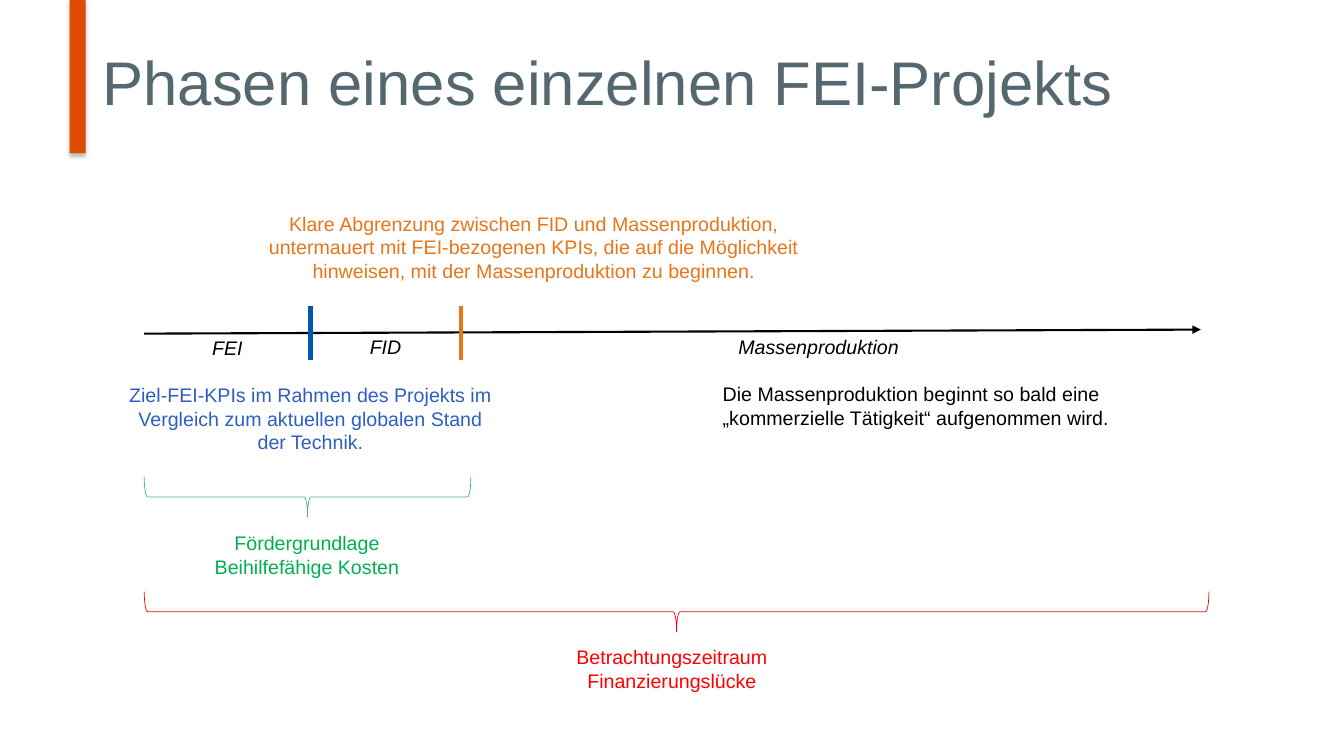
from lxml import etree
from pptx import Presentation
from pptx import util as u
from pptx.dml.color import RGBColor
from pptx.enum import shapes, text
from pptx.oxml.ns import qn

BLACK, ORANGE, BLUE, GREEN, RED = "000000", "E87618", "2D5EC1", "00B050", "FF0000"
LEFT, CENTER = text.PP_ALIGN.LEFT, text.PP_ALIGN.CENTER


def rgb(value):
    return RGBColor.from_string(value)


class PhaseSlide:
    font = "Arial"
    size = 14

    def __init__(self, prs):
        self.s = prs.slides.add_slide(prs.slide_layouts[6])

    def bar(self, x, y, w, h, color):
        """Add a filled bar with a soft shadow below it."""
        sp = self.s.shapes.add_shape(shapes.MSO_SHAPE.RECTANGLE, *map(u.Inches, (x, y, w, h)))
        sp.fill.solid()
        sp.fill.fore_color.rgb = rgb(color)
        sp.line.fill.background()
        sp.shadow.inherit = False
        effects = sp.element.spPr.find(qn("a:effectLst"))
        shadow = etree.SubElement(effects, qn("a:outerShdw"), blurRad=str(u.Pt(3)),
                                  dist=str(u.Pt(2)), dir="5400000", rotWithShape="0")
        tint = etree.SubElement(shadow, qn("a:srgbClr"), val=BLACK)
        etree.SubElement(tint, qn("a:alpha"), val="27000")

    def line(self, x1, y1, x2, y2, color, width, arrow=False):
        c = self.s.shapes.add_connector(shapes.MSO_CONNECTOR.STRAIGHT,
                                        *map(u.Inches, (x1, y1, x2, y2)))
        c.line.color.rgb = rgb(color)
        c.line.width = u.Pt(width)
        if arrow:
            ln = c.element.spPr.find(qn("a:ln"))
            etree.SubElement(ln, qn("a:tailEnd"), type="triangle")
        etree.SubElement(c.element.spPr, qn("a:effectLst"))

    def brace(self, x, y, length, color, depth=0.4):
        """Add a brace that opens upwards; x and y are its visible top left."""
        left, top = x + (length - depth) / 2, y + (depth - length) / 2
        sp = self.s.shapes.add_shape(shapes.MSO_SHAPE.RIGHT_BRACE,
                                     *map(u.Inches, (left, top, depth, length)))
        sp.rotation = 90
        sp.fill.background()
        sp.line.color.rgb = rgb(color)
        sp.line.width = u.Pt(0.5)
        sp.shadow.inherit = False

    def text(self, x, y, w, h, lines, color, size=None, italic=False, align=CENTER,
             anchor=text.MSO_ANCHOR.TOP, spacing=None, wrap=True):
        """Add a text box; each line is a paragraph, and \\n breaks within it."""
        tf = self.s.shapes.add_textbox(*map(u.Inches, (x, y, w, h))).text_frame
        tf.word_wrap = wrap
        tf.vertical_anchor = anchor
        for i, content in enumerate(lines):
            p = tf.add_paragraph() if i else tf.paragraphs[0]
            p.alignment = align
            if spacing:
                p.line_spacing = spacing
            for j, part in enumerate(content.split("\n")):
                if j:
                    p.add_line_break()
                r = p.add_run()
                r.text = part
                r.font.name = self.font
                r.font.size = u.Pt(size or self.size)
                r.font.italic = italic
                r.font.color.rgb = rgb(color)


def main():
    prs = Presentation()
    prs.slide_width, prs.slide_height = u.Inches(13.33), u.Inches(7.5)
    s = PhaseSlide(prs)

    s.bar(0.69, 0, 0.16, 1.52, "E04900")
    s.text(0.92, 0.4, 11.5, 0.89, ["Phasen eines einzelnen FEI-Projekts"], "55676F",
           size=44, align=LEFT, anchor=text.MSO_ANCHOR.MIDDLE, spacing=0.9)

    start = 1.43
    s.line(start, 3.31, 11.91, 3.27, BLACK, 1.5, arrow=True)
    for x, color in ((3.08, "0356B1"), (4.57, ORANGE)):
        s.line(x, 3.04, x, 3.57, color, 3)
    for phase, x, y, w in (("FEI", 1.87, 3.28, 0.77), ("FID", 3.31, 3.27, 1.03),
                           ("Massenproduktion", 5.51, 3.27, 5.22)):
        s.text(x, y, w, 0.34, [phase], BLACK, italic=True)

    s.text(2.55, 2.05, 5.49, 0.81,
           ["Klare Abgrenzung zwischen FID und Massenproduktion, untermauert mit "
            "FEI-bezogenen KPIs, die auf die Möglichkeit hinweisen, mit der "
            "Massenproduktion zu beginnen."], ORANGE)
    s.text(1.13, 3.75, 3.9, 0.81,
           ["Ziel-FEI-KPIs im Rahmen des Projekts im Vergleich zum aktuellen "
            "globalen Stand der Technik."], BLUE)
    s.text(7.07, 3.74, 4.23, 0.57,
           ["Die Massenproduktion beginnt so bald eine „kommerzielle Tätigkeit“ "
            "aufgenommen wird."], BLACK, align=LEFT)

    s.brace(start, 4.73, 3.24, "44BA7E")
    s.text(1.97, 5.22, 2.15, 0.57, ["Fördergrundlage\nBeihilfefähige Kosten"], GREEN)
    s.brace(start, 5.87, 10.56, RED)
    s.text(5.61, 6.35, 2.11, 0.57, ["Betrachtungszeitraum", "Finanzierungslücke"], RED,
           wrap=False)

    prs.save("out.pptx")


if __name__ == "__main__":
    main()
